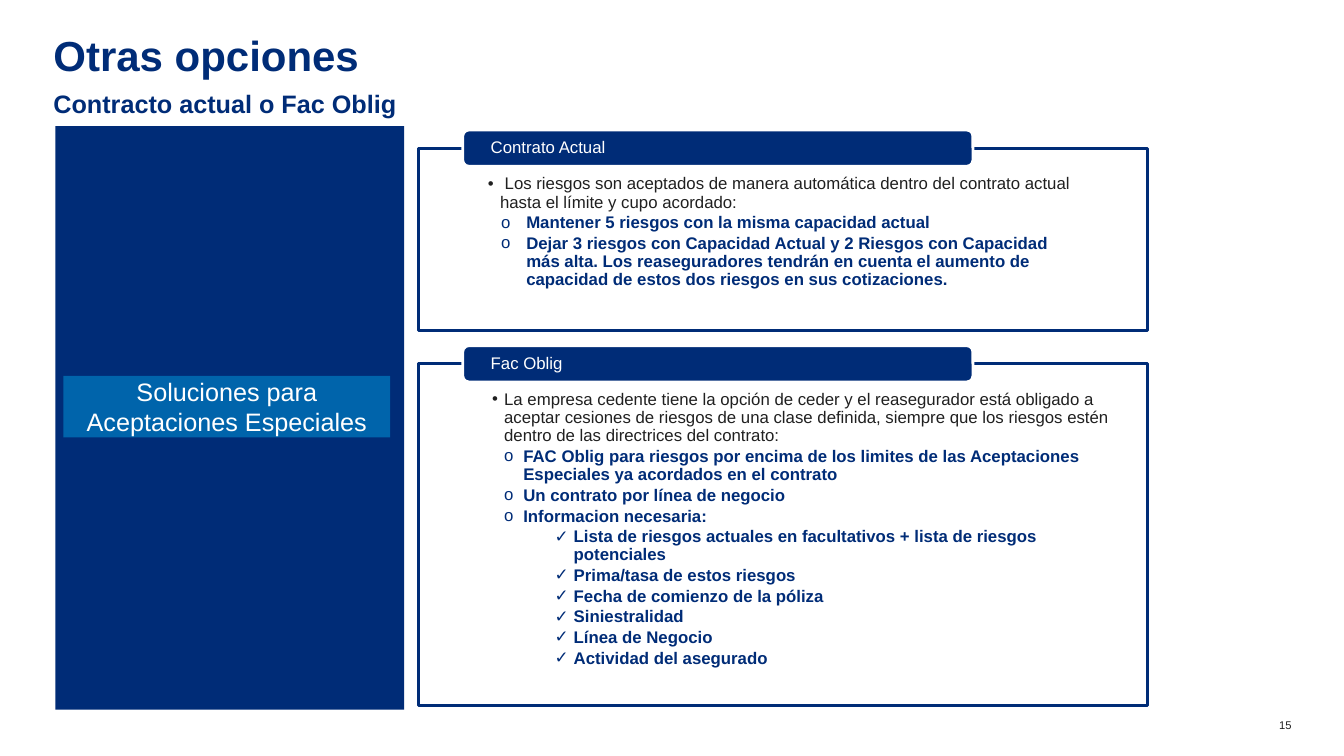
from dataclasses import dataclass

from lxml.etree import SubElement
from pptx import Presentation
from pptx.dml.color import RGBColor
from pptx.enum.shapes import MSO_SHAPE
from pptx.enum.text import MSO_ANCHOR, PP_ALIGN
from pptx.oxml.ns import qn
from pptx.shapes.autoshape import Shape
from pptx.slide import Slide
from pptx.text.text import _Paragraph as Paragraph
from pptx.util import Emu, Pt


@dataclass(frozen=True)
class Theme:
    font: str = "Arial"
    navy: str = "002C77"
    sky: str = "009DE0"
    ink: str = "202020"
    white: str = "FFFFFF"
    title: int = 30
    heading: int = 18
    body: int = 12
    small: int = 8
    outline: int = 2
    tight: float = 0.9
    item_gap: float = 1.8


@dataclass(frozen=True)
class Area:
    left: int
    top: int
    width: int
    height: int


@dataclass(frozen=True)
class Level:
    mark: str
    indent: int
    hanging: int
    color: str
    bold: bool


@dataclass(frozen=True)
class Panel:
    label: str
    frame: Area
    text_area: Area
    levels: tuple[Level, ...]
    items: tuple[tuple[int, str], ...]


THEME = Theme()
INTRO = Level("•", 12, 12, THEME.ink, False)
PANELS = (
    Panel(
        "Contrato Actual",
        Area(415, 147, 723, 181),
        Area(415, 147, 723, 168),
        (INTRO, Level("o", 38, 25, THEME.navy, True)),
        (
            (1, " Los riesgos son aceptados de manera automática dentro del "
                "contrato actual hasta el límite y cupo acordado:"),
            (2, "Mantener 5 riesgos con la misma capacidad actual"),
            (2, "Dejar 3 riesgos con Capacidad Actual y 2 Riesgos con Capacidad "
                "más alta. Los reaseguradores tendrán en cuenta el aumento de "
                "capacidad de estos dos riesgos en sus cotizaciones."),
        ),
    ),
    Panel(
        "Fac Oblig",
        Area(415, 361, 723, 339),
        Area(419, 361, 759, 353),
        (INTRO, Level("o", 31, 19, THEME.navy, True), Level("✓", 81, 19, THEME.navy, True)),
        (
            (1, "La empresa cedente tiene la opción de ceder y el reasegurador está "
                "obligado a aceptar cesiones de riesgos de una clase definida, siempre "
                "que los riesgos estén dentro de las directrices del contrato:"),
            (2, "FAC Oblig para riesgos por encima de los limites de las Aceptaciones "
                "Especiales ya acordados en el contrato"),
            (2, "Un contrato por línea de negocio"),
            (2, "Informacion necesaria:"),
            (3, "Lista de riesgos actuales en facultativos + lista de riesgos potenciales"),
            (3, "Prima/tasa de estos riesgos"),
            (3, "Fecha de comienzo de la póliza"),
            (3, "Siniestralidad"),
            (3, "Línea de Negocio"),
            (3, "Actividad del asegurado"),
        ),
    ),
)


def px(length: int) -> Emu:
    return Emu(length * 9144)


def place(area: Area) -> tuple[Emu, Emu, Emu, Emu]:
    return px(area.left), px(area.top), px(area.width), px(area.height)


def set_margins(box: Shape, left: int, top: int, right: int, bottom: int) -> None:
    frame = box.text_frame
    frame.word_wrap = True
    frame.margin_left, frame.margin_top = px(left), px(top)
    frame.margin_right, frame.margin_bottom = px(right), px(bottom)


def style(para: Paragraph, size: int, color: str, bold: bool = False) -> None:
    for span in para.runs:
        span.font.name = THEME.font
        span.font.size = Pt(size)
        span.font.bold = bold
        span.font.color.rgb = RGBColor.from_string(color)


def add_text(page: Slide, area: Area, text: str, size: int, color: str,
             bold: bool = False, align: PP_ALIGN = PP_ALIGN.LEFT) -> Shape:
    box = page.shapes.add_textbox(*place(area))
    set_margins(box, 0, 0, 0, 0)
    box.text_frame.text = text
    para = box.text_frame.paragraphs[0]
    para.alignment = align
    style(para, size, color, bold)
    return box


def add_block(page: Slide, kind: MSO_SHAPE, area: Area, fill: str,
              line: str = "", opacity: int = 100) -> Shape:
    block = page.shapes.add_shape(kind, *place(area))
    block.shadow.inherit = False
    block.fill.solid()
    block.fill.fore_color.rgb = RGBColor.from_string(fill)
    if opacity < 100:
        tint = block.fill._xPr.find(qn("a:solidFill"))[0]
        SubElement(tint, qn("a:alpha"), val=str(opacity * 1000))
    if line:
        block.line.color.rgb = RGBColor.from_string(line)
        block.line.width = Pt(THEME.outline)
    else:
        block.line.fill.background()
    return block


def format_item(para: Paragraph, depth: int, level: Level) -> None:
    para.level = depth
    para.line_spacing = THEME.tight
    para.space_after = Pt(THEME.item_gap)
    properties = para._p.get_or_add_pPr()
    properties.set("marL", str(px(level.indent)))
    properties.set("indent", str(-px(level.hanging)))
    SubElement(properties, qn("a:buFont"), typeface=THEME.font)
    SubElement(properties, qn("a:buChar"), char=level.mark)
    style(para, THEME.body, level.color, level.bold)


def add_panel(page: Slide, panel: Panel) -> None:
    add_block(page, MSO_SHAPE.RECTANGLE, panel.frame, THEME.white, THEME.navy, 90)
    box = page.shapes.add_textbox(*place(panel.text_area))
    set_margins(box, 69, 27, 69, 9)
    box.text_frame.text = "\n".join(text for _, text in panel.items)
    for para, (depth, _) in zip(box.text_frame.paragraphs, panel.items):
        format_item(para, depth, panel.levels[depth - 1])

    tab_area = Area(panel.frame.left + 44, panel.frame.top - 18, 506, 36)
    tab = add_block(page, MSO_SHAPE.ROUNDED_RECTANGLE, tab_area, THEME.navy, THEME.white)
    set_margins(tab, 26, 0, 26, 0)
    tab.text_frame.vertical_anchor = MSO_ANCHOR.MIDDLE
    tab.text_frame.text = panel.label
    para = tab.text_frame.paragraphs[0]
    para.alignment = PP_ALIGN.LEFT
    para.line_spacing = THEME.tight
    style(para, THEME.body, THEME.white)


def add_sidebar(page: Slide) -> None:
    add_block(page, MSO_SHAPE.RECTANGLE, Area(55, 125, 346, 579), THEME.navy)
    banner = add_block(page, MSO_SHAPE.RECTANGLE, Area(63, 373, 324, 61), THEME.sky, opacity=50)
    set_margins(banner, 10, 5, 10, 5)
    banner.text_frame.vertical_anchor = MSO_ANCHOR.MIDDLE
    banner.text_frame.text = "Soluciones para Aceptaciones Especiales"
    para = banner.text_frame.paragraphs[0]
    para.alignment = PP_ALIGN.CENTER
    style(para, THEME.heading, THEME.white)


def main() -> None:
    deck = Presentation()
    deck.slide_width, deck.slide_height = px(1333), px(750)
    page = deck.slides.add_slide(deck.slide_layouts[6])
    title = add_text(page, Area(53, 39, 1227, 54), "Otras opciones",
                     THEME.title, THEME.navy, True)
    title.text_frame.paragraphs[0].line_spacing = 0.8
    add_text(page, Area(53, 88, 1228, 35), "Contracto actual o Fac Oblig",
             THEME.heading, THEME.navy, True)
    add_text(page, Area(1250, 713, 31, 13), "15", THEME.small, THEME.ink, align=PP_ALIGN.RIGHT)
    for panel in PANELS:
        add_panel(page, panel)
    add_sidebar(page)
    deck.save("out.pptx")


if __name__ == "__main__":
    main()
